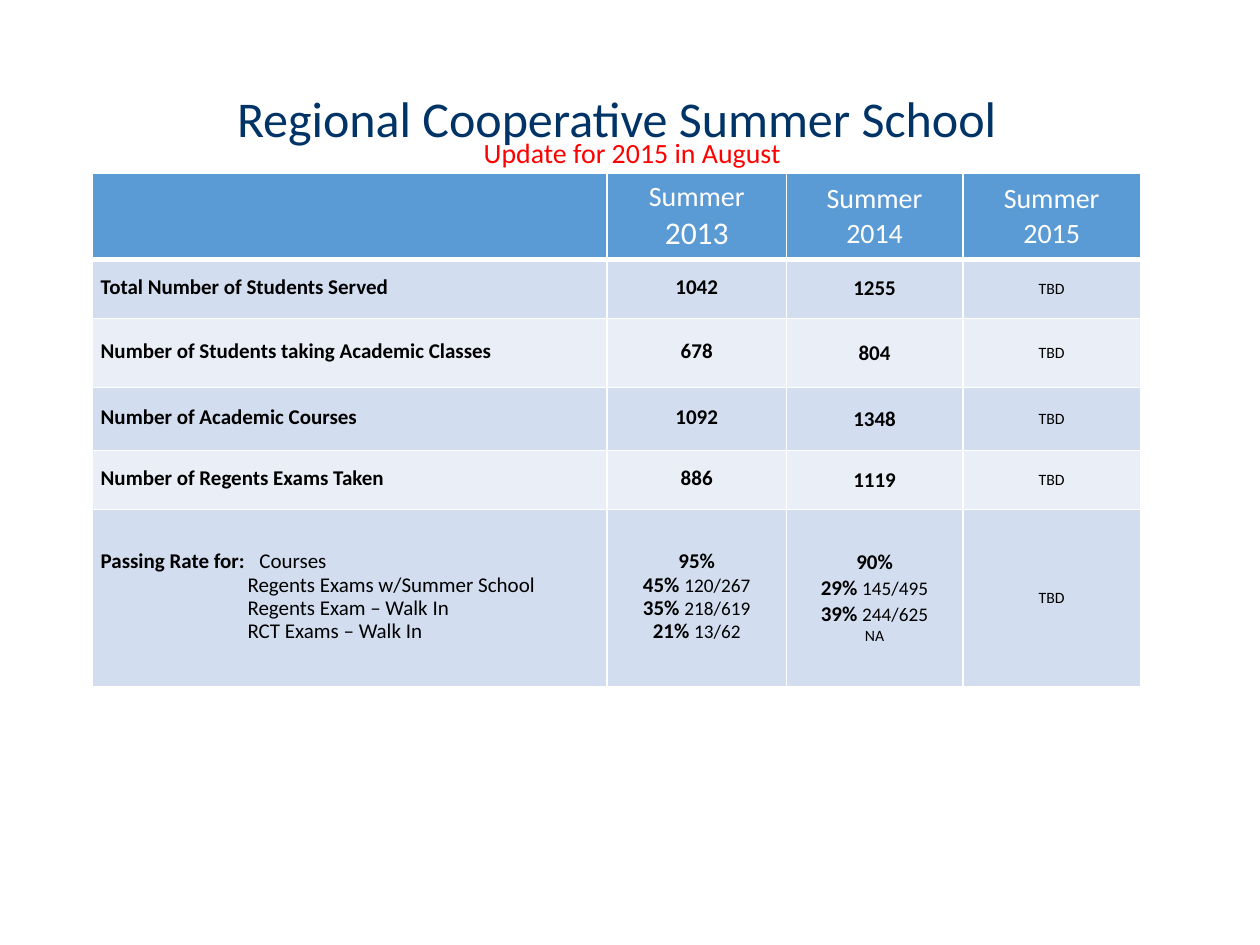
import pptx
import pptx.util
import pptx.dml.color
import pptx.enum.text
import pptx.oxml
import pptx.oxml.ns
from dataclasses import dataclass

Cm, Pt = pptx.util.Cm, pptx.util.Pt
RGB = pptx.dml.color.RGBColor.from_string
ALIGN = pptx.enum.text.PP_ALIGN
MIDDLE = pptx.enum.text.MSO_ANCHOR.MIDDLE


@dataclass(frozen=True)
class Theme:
    font: str = "Calibri"
    navy: str = "003366"
    red: str = "FF0000"
    black: str = "000000"
    white: str = "FFFFFF"
    header: str = "5B9BD5"
    bands: tuple = ("D2DEEF", "EAEFF7")
    title: float = 28.6
    note: float = 15.9
    year: float = 18
    head: float = 16
    body: float = 12
    detail: float = 11
    small: float = 9


T = Theme()
TIGHT = dict(line_spacing=0.75, space_before=Pt(2.4))
CENTER = dict(alignment=ALIGN.CENTER)
CELL = dict(vertical_anchor=MIDDLE, margin_left=Cm(0.18), margin_right=Cm(0.18),
            margin_top=Cm(0.13), margin_bottom=Cm(0.13))

COLS = (10.39, 3.61, 3.56, 3.58)
ROWS = (1.68, 1.19, 1.4, 1.27, 1.19, 3.56)
COUNTS = (
    ("Total Number of Students Served", "1042", "1255"),
    ("Number of Students taking Academic Classes", "678", "804"),
    ("Number of Academic Courses", "1092", "1348"),
    ("Number of Regents Exams Taken", "886", "1119"),
)
EXAMS = ("Regents Exams w/Summer School", "Regents Exam – Walk In", "RCT Exams – Walk In")
RATES_2013 = (("45% ", "120/267"), ("35% ", "218/619"), ("21% ", "13/62"))
RATES_2014 = (("29% ", "145/495"), ("39% ", "244/625"))
PENDING = "TBD"


def apply(obj, formats):
    for name, value in formats.items():
        setattr(obj, name, value)


def run(text, size=T.body, color=T.black, bold=False):
    return text, size, color, bold


def bold(text):
    return run(text, bold=True)


def small(text):
    return run(text, T.small)


def head(text, size=T.head):
    return run(text, size, T.white)


def rate(percent, detail):
    return [bold(percent), run(detail, T.detail)]


def write(tf, paragraphs, formats):
    """Fill a text frame; each paragraph is a list of runs."""
    for i, runs in enumerate(paragraphs):
        p = tf.paragraphs[0] if i == 0 else tf.add_paragraph()
        apply(p, formats)
        for text, size, color, is_bold in runs:
            r = p.add_run()
            r.text = text
            apply(r.font, dict(name=T.font, size=Pt(size), bold=is_bold))
            r.font.color.rgb = RGB(color)


def add_borders(cell, bottom=1):
    tcPr = cell._tc.get_or_add_tcPr()
    widths = dict(lnL=1, lnR=1, lnT=1, lnB=bottom)
    for i, (tag, width) in enumerate(widths.items()):
        tcPr.insert(i, pptx.oxml.parse_xml(
            f'<a:{tag} {pptx.oxml.ns.nsdecls("a")} w="{Pt(width)}"><a:solidFill>'
            f'<a:srgbClr val="{T.white}"/></a:solidFill></a:{tag}>'))


def indent_exams(tf):
    """Set a tab stop for the first item and a left indent for the others."""
    first, *others = tf.paragraphs
    pPr = first._p.get_or_add_pPr()
    pPr.append(pptx.oxml.parse_xml(
        f'<a:tabLst {pptx.oxml.ns.nsdecls("a")}><a:tab pos="{Cm(3.2)}" algn="l"/></a:tabLst>'))
    for p in others:
        p._p.get_or_add_pPr().set("marL", str(Cm(2.96)))


def table_rows():
    """Give each row as cells, each cell a list of paragraphs."""
    rows = [[[],
             [[head("Summer "), head("2013", T.year)]],
             [[head("Summer")], [head("2014")]],
             [[head("Summer")], [head("2015")]]]]
    pending = [[small(PENDING)]]
    rows += [[[[bold(text)]] for text in row] + [pending] for row in COUNTS]
    rows.append([
        [[bold("Passing Rate for:\t"), run("Courses")]] + [[run(exam)] for exam in EXAMS],
        [[bold("95%")]] + [rate(*pair) for pair in RATES_2013],
        [[bold("90%")]] + [rate(*pair) for pair in RATES_2014] + [[small("NA")]],
        pending])
    return rows


def add_title(slide, left, top, width, height):
    sp = slide.shapes.title
    apply(sp, dict(left=Cm(left), top=Cm(top), width=Cm(width), height=Cm(height)))
    sp.text_frame.vertical_anchor = MIDDLE
    write(sp.text_frame, [[run("Regional Cooperative Summer School", T.title, T.navy)]],
          dict(CENTER, line_spacing=0.9))


def add_results(slide, left, top):
    rows = table_rows()
    frame = slide.shapes.add_table(len(ROWS), len(COLS), Cm(left), Cm(top),
                                   Cm(sum(COLS)), Cm(sum(ROWS)))
    table = frame.table
    for column, width in zip(table.columns, COLS):
        column.width = Cm(width)
    for row, height in zip(table.rows, ROWS):
        row.height = Cm(height)
    for i, row in enumerate(rows):
        for j, paragraphs in enumerate(row):
            cell = table.cell(i, j)
            apply(cell, CELL)
            cell.fill.solid()
            cell.fill.fore_color.rgb = RGB(T.bands[(i - 1) % 2] if i else T.header)
            add_borders(cell, bottom=1 if i else 3)
            formats = dict(CENTER) if j else {}
            if i and j < 2:
                formats.update(TIGHT)
            write(cell.text_frame, paragraphs, formats)
    indent_exams(table.cell(len(ROWS) - 1, 0).text_frame)


def add_note(slide, left, top, width, height):
    sp = slide.shapes.add_textbox(Cm(left), Cm(top), Cm(width), Cm(height))
    apply(sp.text_frame, dict(word_wrap=False,
                              auto_size=pptx.enum.text.MSO_AUTO_SIZE.SHAPE_TO_FIT_TEXT))
    write(sp.text_frame, [[run("Update for 2015 in August", T.note, T.red)]], {})


def main():
    prs = pptx.Presentation()
    apply(prs, dict(slide_width=Cm(25.4), slide_height=Cm(19.05)))
    slide = prs.slides.add_slide(prs.slide_layouts[5])
    add_title(slide, 1.85, 1.8, 21.16, 1.27)
    add_results(slide, 1.85, 3.5)
    add_note(slide, 9.5, 2.62, 6.55, 0.94)
    prs.save("out.pptx")


if __name__ == "__main__":
    main()
